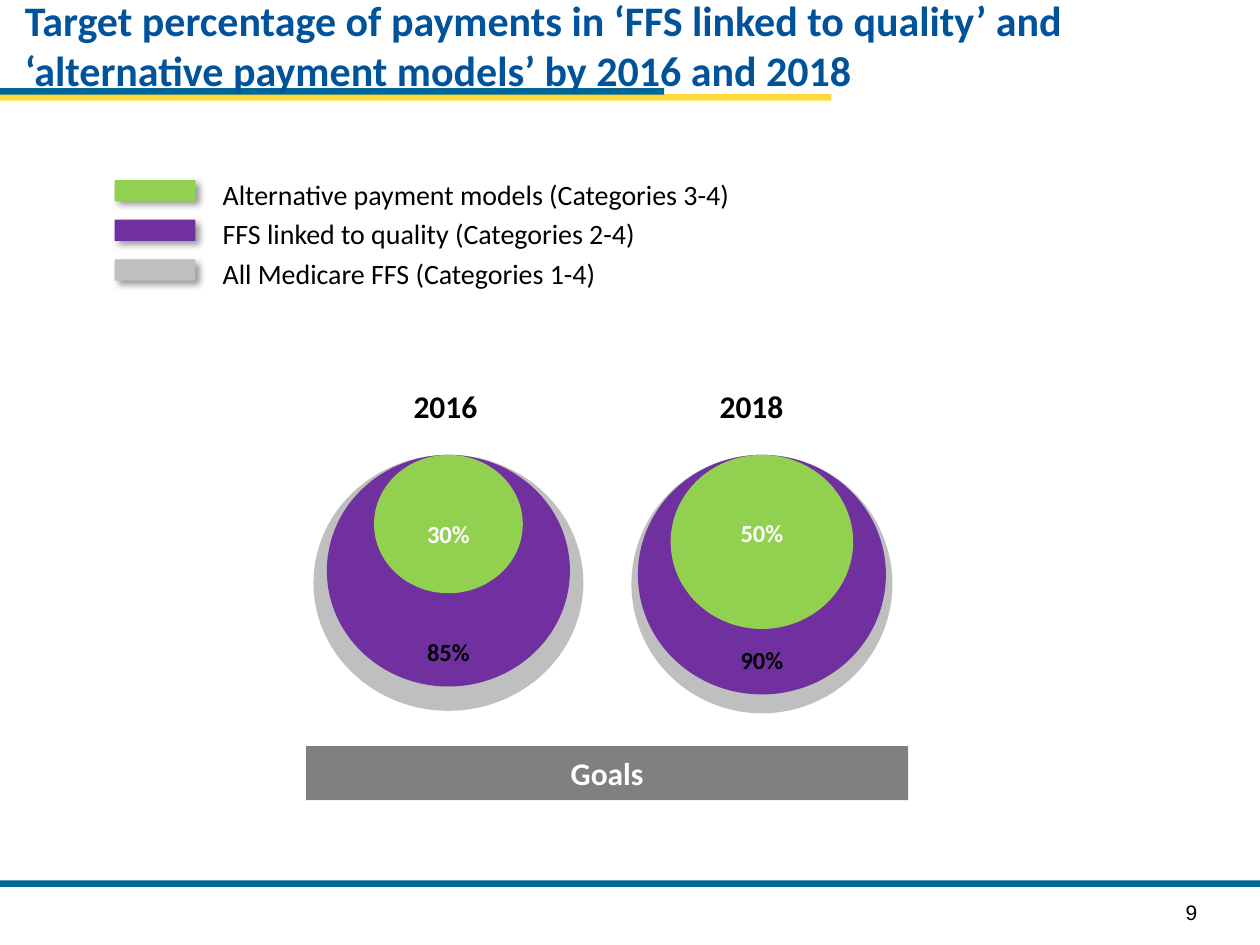
from dataclasses import dataclass

from lxml import etree
from pptx import Presentation
from pptx import util as u
from pptx.dml import color
from pptx.enum import shapes, text
from pptx.oxml import ns


@dataclass(frozen=True)
class Theme:
    title: str = "00539B"
    rule: str = "006699"
    yellow: str = "FFD937"
    green: str = "92D050"
    purple: str = "7030A0"
    silver: str = "BFBFBF"
    gray: str = "808080"
    black: str = "000000"
    white: str = "FFFFFF"
    title_size: int = 24
    heading_size: int = 18
    legend_size: int = 16
    label_size: int = 14
    number_size: int = 12


theme = Theme()
deck = Presentation()
deck.slide_width, deck.slide_height = u.Cm(25.4), u.Cm(19.05)
page = deck.slides.add_slide(deck.slide_layouts[6])


def add_block(kind, left, top, width, height, fill):
    block = page.shapes.add_shape(kind, u.Cm(left), u.Cm(top), u.Cm(width), u.Cm(height))
    block.shadow.inherit = False
    block.fill.solid()
    block.fill.fore_color.rgb = color.RGBColor.from_string(fill)
    block.line.fill.background()
    return block


def add_label(wording, left, top, width, height, size, ink=theme.black, bold=True,
              align=text.PP_ALIGN.CENTER, anchor=text.MSO_ANCHOR.TOP, font="Calibri"):
    box = page.shapes.add_textbox(u.Cm(left), u.Cm(top), u.Cm(width), u.Cm(height))
    frame = box.text_frame
    frame.word_wrap = True
    frame.vertical_anchor = anchor
    frame.text = wording
    para = frame.paragraphs[0]
    para.alignment = align
    span = para.runs[0]
    span.font.name = font
    span.font.size = u.Pt(size)
    span.font.bold = bold
    span.font.color.rgb = color.RGBColor.from_string(ink)


RECTANGLE = shapes.MSO_SHAPE.RECTANGLE
OVAL = shapes.MSO_SHAPE.OVAL
LEFT = text.PP_ALIGN.LEFT
MIDDLE = text.MSO_ANCHOR.MIDDLE

for top, width, fill in [(1.9, 16.76, theme.yellow), (1.78, 13.39, theme.rule),
                         (17.75, 25.4, theme.rule)]:
    add_block(RECTANGLE, 0, top, width, 0.13, fill)

add_label("Target percentage of payments in ‘FFS linked to quality’ and "
          "‘alternative payment models’ by 2016 and 2018",
          0.25, 0.13, 24.43, 1.55, theme.title_size, theme.title, align=LEFT, anchor=MIDDLE)

legend = [
    ("Alternative payment models (Categories 3-4)", theme.green),
    ("FFS linked to quality (Categories 2-4)", theme.purple),
    ("All Medicare FFS (Categories 1-4)", theme.silver),
]
for row, (wording, fill) in enumerate(legend):
    offset = 0.8 * row
    swatch = add_block(RECTANGLE, 2.31, 3.63 + offset, 1.63, 0.43, fill)
    effects = swatch._element.spPr.find(ns.qn("a:effectLst"))
    shadow = etree.SubElement(effects, ns.qn("a:outerShdw"), blurRad=str(u.Pt(4)),
                              dist=str(u.Pt(3)), dir="2700000", algn="tl", rotWithShape="0")
    tint = etree.SubElement(shadow, ns.qn("a:srgbClr"), val=theme.black)
    etree.SubElement(tint, ns.qn("a:alpha"), val="40000")
    add_label(wording, 4.24, 3.45 + offset, 12.8, 0.94, theme.legend_size,
              bold=False, align=LEFT)

goals = [
    ("2016", 8.98, 9.04, [(5.44, 5.16), (4.9, 4.67), (3, 2.79)],
     [("30%", 10.76, theme.white), ("85%", 13.14, theme.black)]),
    ("2018", 15.15, 15.36, [(5.26, 5.21), (5, 4.83), (3.68, 3.51)],
     [("50%", 10.74, theme.white), ("90%", 13.3, theme.black)]),
]
for year, year_center, center, sizes, shares in goals:
    add_label(year, year_center - 2.5, 7.67, 5, 1.02, theme.heading_size)
    for (width, height), fill in zip(sizes, (theme.silver, theme.purple, theme.green)):
        add_block(OVAL, center - width / 2, 9.17, width, height, fill)
    for share, middle, ink in shares:
        add_label(share, center - 0.9, middle - 0.45, 1.8, 0.9, theme.label_size, ink,
                  anchor=MIDDLE)

add_block(RECTANGLE, 6.17, 15.04, 12.14, 1.09, theme.gray)
add_label("Goals", 6.17, 15.04, 12.14, 1.09, theme.heading_size, theme.white, anchor=MIDDLE)

add_label("9", 23.65, 18.01, 1.24, 0.76, theme.number_size, bold=False, align=LEFT, font="Arial")

deck.save("out.pptx")
